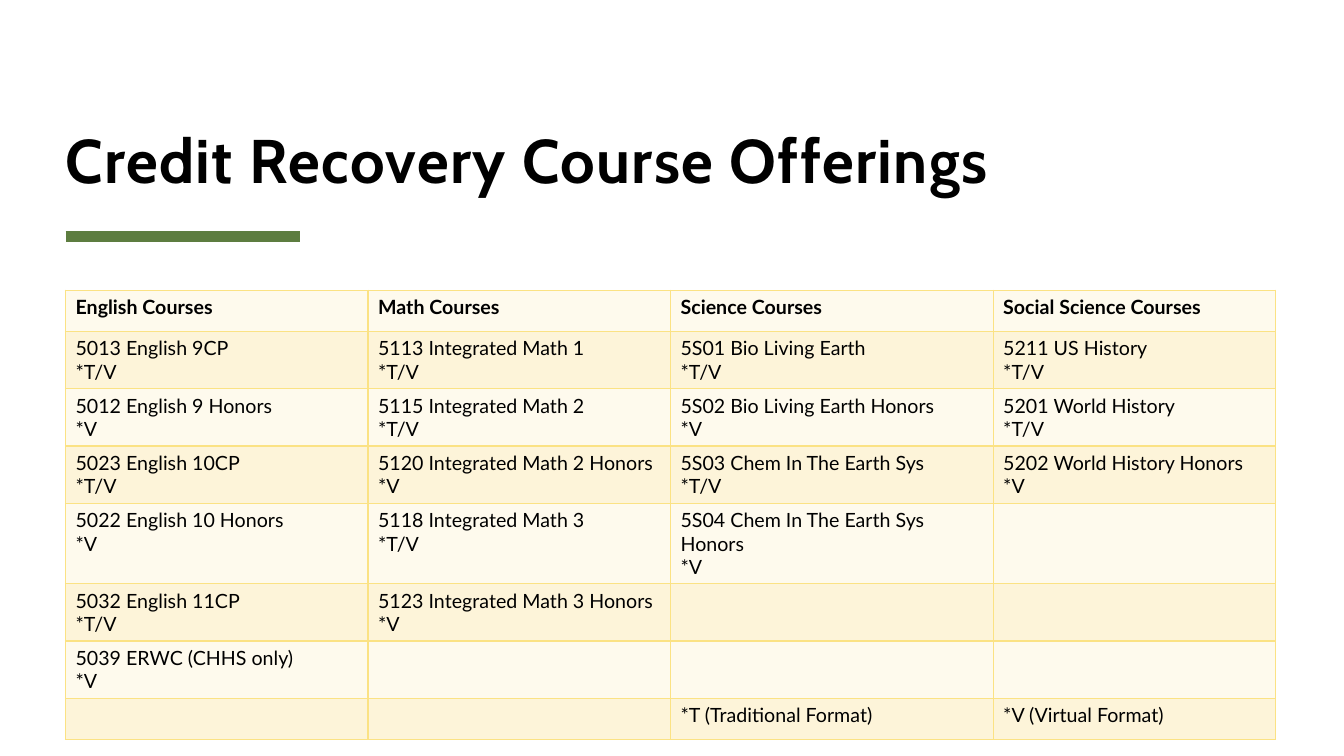
from lxml import etree
from pptx import Presentation
from pptx.dml.color import RGBColor
from pptx.enum.shapes import MSO_CONNECTOR
from pptx.enum.text import MSO_ANCHOR
from pptx.oxml.ns import qn
from pptx.util import Emu, Pt

STRAIGHT = MSO_CONNECTOR.STRAIGHT
BOTTOM = MSO_ANCHOR.BOTTOM

PX = 9144  # 100 px to the inch
COLORS = {
    "text": "000000",
    "accent": "5D7D40",
    "border": "FBE284",
    "light": "FEFAED",
    "band": "FDF4D9",
}
TITLE_FONT, BODY_FONT = "Cabin", "Lato"

COLUMN_WIDTHS = [300, 300, 320, 280]
ROW_HEIGHTS = [41, 41, 51, 41, 41, 41, 41, 41]
COURSES = [
    ["English Courses", "Math Courses", "Science Courses", "Social Science Courses"],
    ["5013 English 9CP\n*T/V", "5113 Integrated Math 1\n*T/V",
     "5S01 Bio Living Earth\n*T/V", "5211 US History\n*T/V"],
    ["5012 English 9 Honors\n*V", "5115 Integrated Math 2\n*T/V",
     "5S02 Bio Living Earth Honors\n*V", "5201 World History\n*T/V"],
    ["5023 English 10CP\n*T/V", "5120 Integrated Math 2 Honors\n*V",
     "5S03 Chem In The Earth Sys\n*T/V", "5202 World History Honors\n*V"],
    ["5022 English 10 Honors\n*V", "5118 Integrated Math 3\n*T/V",
     "5S04 Chem In The Earth Sys Honors\n*V", ""],
    ["5032 English 11CP\n*T/V", "5123 Integrated Math 3 Honors\n*V", "", ""],
    ["5039 ERWC (CHHS only)\n*V", "", "", ""],
    ["", "", "*T (Traditional Format)", "*V (Virtual Format)"],
]


def px(length):
    return Emu(length * PX)


def color(name):
    return RGBColor.from_string(COLORS[name])


class SlideBuilder:
    def __init__(self, page):
        self.page = page

    def style(self, frame, font, size, bold):
        for para in frame.paragraphs:
            for span in para.runs:
                span.font.name = font
                span.font.size = Pt(size)
                span.font.bold = bold
                span.font.color.rgb = color("text")

    def title(self, text, left, top, width, height):
        box = self.page.shapes.add_textbox(px(left), px(top), px(width), px(height))
        frame = box.text_frame
        frame.word_wrap = True
        frame.vertical_anchor = BOTTOM
        frame.margin_left = frame.margin_right = 0
        frame.margin_top = frame.margin_bottom = 0
        frame.text = text
        para = frame.paragraphs[0]
        para.line_spacing = 0.8
        self.style(frame, TITLE_FONT, 44, True)
        # Letter spacing of one point
        para.runs[0].font._element.set("spc", "100")

    def rule(self, left, top, width, weight):
        line = self.page.shapes.add_connector(
            STRAIGHT, px(left), px(top), px(left + width), px(top))
        line.line.color.rgb = color("accent")
        line.line.width = Pt(weight)
        etree.SubElement(line._element.spPr, qn("a:effectLst"))

    def borders(self, cell):
        properties = cell._tc.get_or_add_tcPr()
        for index, side in enumerate(("lnL", "lnR", "lnT", "lnB")):
            edge = etree.Element(qn(f"a:{side}"), w=str(Pt(1)))
            fill = etree.SubElement(edge, qn("a:solidFill"))
            etree.SubElement(fill, qn("a:srgbClr"), val=COLORS["border"])
            properties.insert(index, edge)

    def table(self, rows, left, top, widths, heights):
        table = self.page.shapes.add_table(
            len(rows), len(widths), px(left), px(top),
            px(sum(widths)), px(sum(heights))).table
        table.first_row = table.horz_banding = False
        for column, width in zip(table.columns, widths):
            column.width = px(width)
        for row, height in zip(table.rows, heights):
            row.height = px(height)
        for row_index, texts in enumerate(rows):
            for column_index, text in enumerate(texts):
                cell = table.cell(row_index, column_index)
                cell.fill.solid()
                cell.fill.fore_color.rgb = color("band" if row_index % 2 else "light")
                self.borders(cell)
                if text:
                    cell.text_frame.text = text
                    self.style(cell.text_frame, BODY_FONT, 14, row_index == 0)


def main():
    deck = Presentation()
    deck.slide_width, deck.slide_height = px(1333), px(750)
    builder = SlideBuilder(deck.slides.add_slide(deck.slide_layouts[6]))

    # Heading with its accent rule
    builder.rule(65, 235, 233, 8)
    builder.title("Credit Recovery Course Offerings", 65, 22, 1200, 172)

    # Course table
    builder.table(COURSES, 65, 288, COLUMN_WIDTHS, ROW_HEIGHTS)

    deck.save("out.pptx")


if __name__ == "__main__":
    main()
